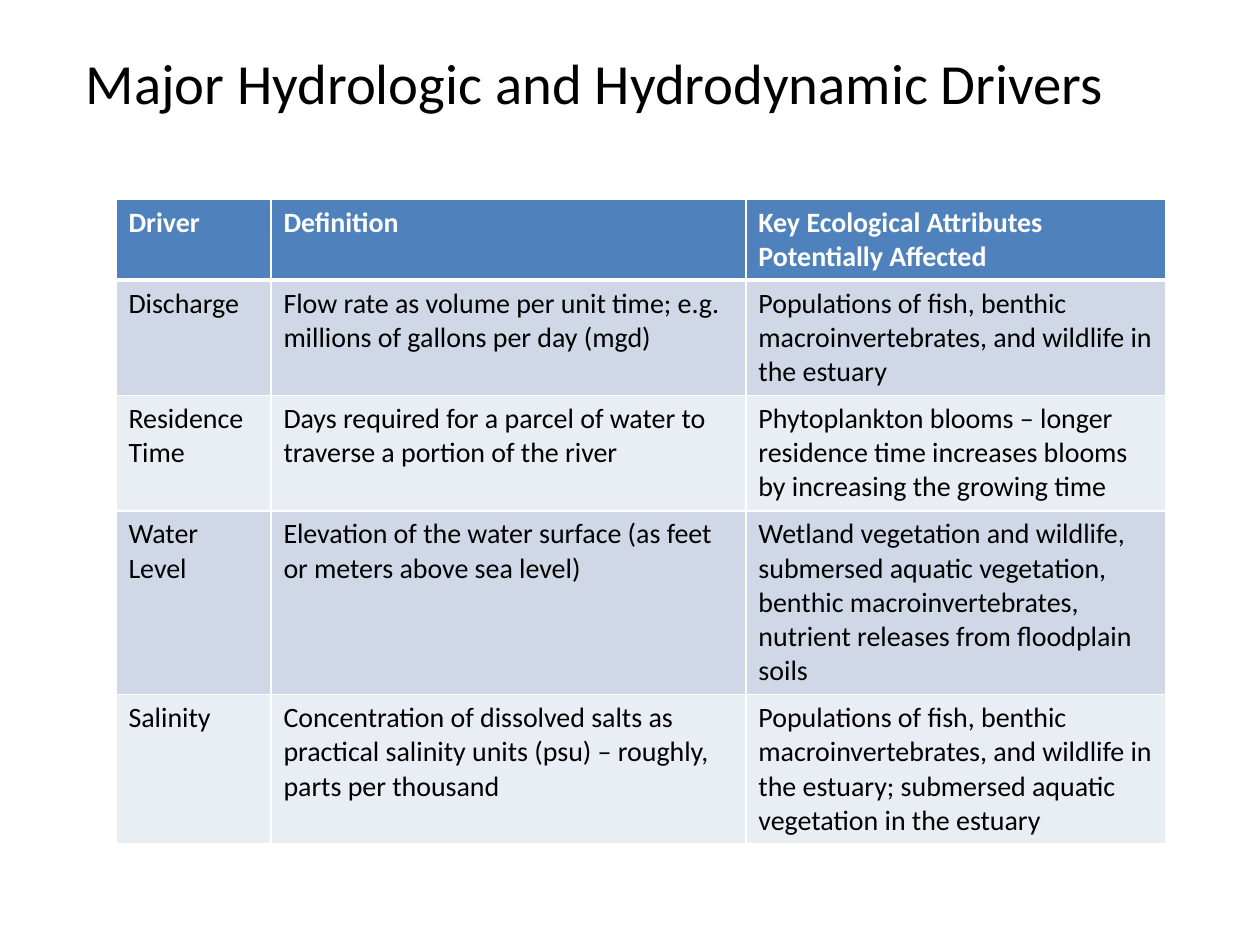
from dataclasses import dataclass

from lxml import etree
from pptx import Presentation
from pptx.dml.color import RGBColor
from pptx.enum import text
from pptx.oxml import ns
from pptx.util import Inches, Pt


@dataclass(frozen=True)
class Theme:
    font: str = "Calibri"
    title: float = 32.4
    body: float = 16
    ink: str = "000000"
    white: str = "FFFFFF"
    head: str = "4F81BD"
    bands: tuple = ("D0D8E8", "E9EDF4")
    thin: float = 1
    thick: float = 3


THEME = Theme()
COLS = (1.23, 3.77, 3.33)
ROW = 0.41
DRIVERS = (
    ("Driver", "Definition", "Key Ecological Attributes Potentially Affected"),
    ("Discharge",
     "Flow rate as volume per unit time; e.g. millions of gallons per day (mgd)",
     "Populations of fish, benthic macroinvertebrates, and wildlife in the estuary"),
    ("Residence Time",
     "Days required for a parcel of water to traverse a portion of the river",
     "Phytoplankton blooms – longer residence time increases blooms by "
     "increasing the growing time"),
    ("Water Level",
     "Elevation of the water surface (as feet or meters above sea level)",
     "Wetland vegetation and wildlife, submersed aquatic vegetation, benthic "
     "macroinvertebrates, nutrient releases from floodplain soils"),
    ("Salinity",
     "Concentration of dissolved salts as practical salinity units (psu) – "
     "roughly, parts per thousand",
     "Populations of fish, benthic macroinvertebrates, and wildlife in the "
     "estuary; submersed aquatic vegetation in the estuary"),
)


def style(frame, size, color, bold=False):
    for para in frame.paragraphs:
        for run in para.runs:
            font = run.font
            font.name, font.size, font.bold = THEME.font, Pt(size), bold
            font.color.rgb = RGBColor.from_string(color)


def set_title(slide, words):
    title = slide.shapes.title
    title.left, title.top = Inches(0.58), Inches(0.33)
    title.width, title.height = Inches(9), Inches(1.25)
    frame = title.text_frame
    frame.text = words
    frame.word_wrap = True
    frame.auto_size = text.MSO_AUTO_SIZE.NONE
    frame.vertical_anchor = text.MSO_ANCHOR.TOP
    frame.paragraphs[0].alignment = text.PP_ALIGN.LEFT
    style(frame, THEME.title, THEME.ink)


def add_edges(cell, top, bottom):
    """Draw white borders; they must come before the fill in the cell."""
    props = cell._tc.get_or_add_tcPr()
    edges = {"lnL": THEME.thin, "lnR": THEME.thin, "lnT": top, "lnB": bottom}
    for at, (tag, width) in enumerate(edges.items()):
        line = etree.Element(ns.qn(f"a:{tag}"), w=str(Pt(width)))
        fill = etree.SubElement(line, ns.qn("a:solidFill"))
        etree.SubElement(fill, ns.qn("a:srgbClr"), val=THEME.white)
        props.insert(at, line)


def fill_cell(cell, words, row):
    head = row == 0
    cell.text = words
    style(cell.text_frame, THEME.body, THEME.white if head else THEME.ink, head)
    color = THEME.head if head else THEME.bands[(row - 1) % 2]
    cell.fill.solid()
    cell.fill.fore_color.rgb = RGBColor.from_string(color)
    add_edges(cell, THEME.thick if row == 1 else THEME.thin,
              THEME.thick if head else THEME.thin)


def add_grid(slide, rows):
    """Add the table; its rows grow from a minimum height to fit the text."""
    frame = slide.shapes.add_table(
        len(rows), len(COLS), Inches(0.92), Inches(1.58),
        Inches(sum(COLS)), Inches(ROW * len(rows)))
    frame.height = Inches(5.03)
    table = frame.table
    for col, width in zip(table.columns, COLS):
        col.width = Inches(width)
    for r, row in enumerate(rows):
        for c, words in enumerate(row):
            fill_cell(table.cell(r, c), words, r)


def main():
    deck = Presentation()
    deck.slide_width, deck.slide_height = Inches(10), Inches(7.5)
    slide = deck.slides.add_slide(deck.slide_layouts[5])
    set_title(slide, "Major Hydrologic and Hydrodynamic Drivers")
    add_grid(slide, DRIVERS)
    deck.save("out.pptx")


if __name__ == "__main__":
    main()
